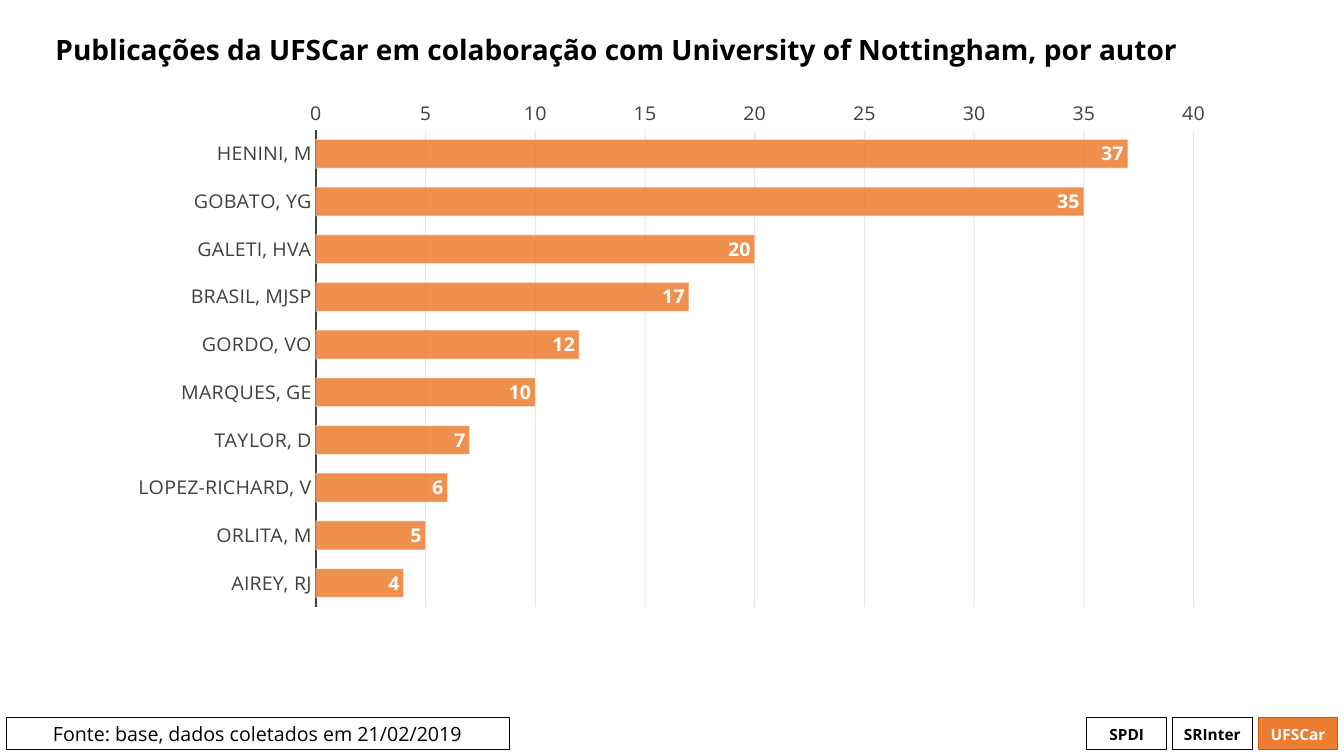
import pptx
import pptx.chart.data
import pptx.dml.color
import pptx.enum.chart
import pptx.enum.shapes
import pptx.enum.text
import pptx.oxml
import pptx.oxml.ns
import pptx.util
from pptx.util import Inches

FONT = "Open Sans"
BLACK, WHITE, GRAY, ORANGE = "000000", "FFFFFF", "404040", "ED7D31"
ALIGN = pptx.enum.text.PP_ALIGN
ANCHOR = pptx.enum.text.MSO_ANCHOR

AUTHORS = {
    "HENINI, M": 37,
    "GOBATO, YG": 35,
    "GALETI, HVA": 20,
    "BRASIL, MJSP": 17,
    "GORDO, VO": 12,
    "MARQUES, GE": 10,
    "TAYLOR, D": 7,
    "LOPEZ-RICHARD, V": 6,
    "ORLITA, M": 5,
    "AIREY, RJ": 4,
}


def rgb(color):
    return pptx.dml.color.RGBColor.from_string(color)


def style(font, size, color, bold=False):
    font.name = FONT
    font.size = pptx.util.Pt(size)
    font.bold = bold
    font.color.rgb = rgb(color)


def paint(fill, color, alpha=100):
    """Give a solid fill, with its opacity in percent."""
    fill.solid()
    fill.fore_color.rgb = rgb(color)
    if alpha < 100:
        for node in fill._xPr.iter(pptx.oxml.ns.qn("a:srgbClr")):
            if node.getparent().getparent() is fill._xPr:
                node.append(pptx.oxml.parse_xml(
                    f'<a:alpha {pptx.oxml.ns.nsdecls("a")} val="{alpha * 1000}"/>'))


def stroke(line, color, width=0.75, alpha=100):
    line.width = pptx.util.Pt(width)
    paint(line.fill, color, alpha)


def write(shape, text, size, color, bold=False, align=ALIGN.CENTER):
    frame = shape.text_frame
    frame.word_wrap = True
    frame.vertical_anchor = ANCHOR.MIDDLE
    para = frame.paragraphs[0]
    para.alignment = align
    run = para.add_run()
    run.text = text
    style(run.font, size, color, bold)


def add_box(slide, text, left, width, size, bold=False, fill=None,
            edge=BLACK, color=BLACK):
    """Add a framed label to the footer row."""
    box = slide.shapes.add_shape(
        pptx.enum.shapes.MSO_SHAPE.RECTANGLE,
        Inches(left), Inches(7.12), Inches(width), Inches(0.32))
    box.shadow.inherit = False
    if fill:
        paint(box.fill, fill)
    else:
        box.fill.background()
    stroke(box.line, edge)
    write(box, text, size, color, bold)
    frame = box.text_frame
    frame.margin_left = frame.margin_right = Inches(0.02)
    frame.margin_top = frame.margin_bottom = 0
    return box


def add_title(slide, text):
    title = slide.shapes.title
    title.left, title.top = Inches(0.45), Inches(0.06)
    title.width, title.height = Inches(12.41), Inches(0.91)
    write(title, text, 20, BLACK, True, ALIGN.LEFT)
    title.text_frame.paragraphs[0].line_spacing = 0.9


def set_axes(chart):
    enum = pptx.enum.chart
    cats, vals = chart.category_axis, chart.value_axis
    for axis in (cats, vals):
        axis.major_tick_mark = axis.minor_tick_mark = enum.XL_TICK_MARK.NONE
        style(axis.tick_labels.font, 14, GRAY)
    cats.reverse_order = True
    cats.crosses = enum.XL_AXIS_CROSSES.MAXIMUM
    cats.has_major_gridlines = False
    stroke(cats.format.line, GRAY, 1.5)
    vals.minimum_scale, vals.maximum_scale, vals.major_unit = 0, 40, 5
    vals.format.line.fill.background()
    vals.has_major_gridlines = True
    stroke(vals.major_gridlines.format.line, "0D0D0D", alpha=10)


def set_plot(chart, left, top, width, height):
    """Place the inner plot area by fractions of the chart."""
    area = chart._chartSpace.chart.plotArea
    for old in area.findall(pptx.oxml.ns.qn("c:layout")):
        area.remove(old)
    parts = "".join(f'<c:{tag} val="{val}"/>' for tag, val in (
        ("layoutTarget", "inner"), ("xMode", "edge"), ("yMode", "edge"),
        ("x", left), ("y", top), ("w", width), ("h", height)))
    area.insert(0, pptx.oxml.parse_xml(
        f'<c:layout {pptx.oxml.ns.nsdecls("c")}>'
        f'<c:manualLayout>{parts}</c:manualLayout></c:layout>'))


def add_bars(slide, counts):
    enum = pptx.enum.chart
    data = pptx.chart.data.CategoryChartData()
    data.categories = list(counts)
    data.add_series("Series 1", list(counts.values()))
    chart = slide.shapes.add_chart(
        enum.XL_CHART_TYPE.BAR_CLUSTERED, Inches(1.15), Inches(0.99),
        Inches(11.02), Inches(5.51), data).chart
    chart.has_legend = chart.has_title = False
    style(chart.font, 14, BLACK)
    set_axes(chart)
    set_plot(chart, 0.18, 0.02, 0.79, 0.89)

    plot = chart.plots[0]
    plot.gap_width = 65
    plot.vary_by_categories = False
    bars = plot.series[0]
    paint(bars.format.fill, ORANGE, 85)
    stroke(bars.format.line, WHITE, alpha=50)
    labels = bars.data_labels
    labels.show_value = True
    labels.position = enum.XL_LABEL_POSITION.INSIDE_END
    style(labels.font, 14, WHITE, True)


def main():
    deck = pptx.Presentation()
    deck.slide_width, deck.slide_height = Inches(13.33), Inches(7.5)
    slide = deck.slides.add_slide(deck.slide_layouts[5])

    add_title(slide, "Publicações da UFSCar em colaboração com "
                     "University of Nottingham, por autor")
    add_bars(slide, AUTHORS)
    add_box(slide, "Fonte: base, dados coletados em 21/02/2019", 0.06, 4.99, 14)
    plain = {}
    active = {"fill": ORANGE, "edge": "C55A11", "color": WHITE}
    tabs = (("SPDI", plain), ("SRInter", plain), ("UFSCar", active))
    for i, (name, look) in enumerate(tabs):
        add_box(slide, name, 10.78 + 0.85 * i, 0.79, 11, True, **look)

    deck.save("out.pptx")


if __name__ == "__main__":
    main()
